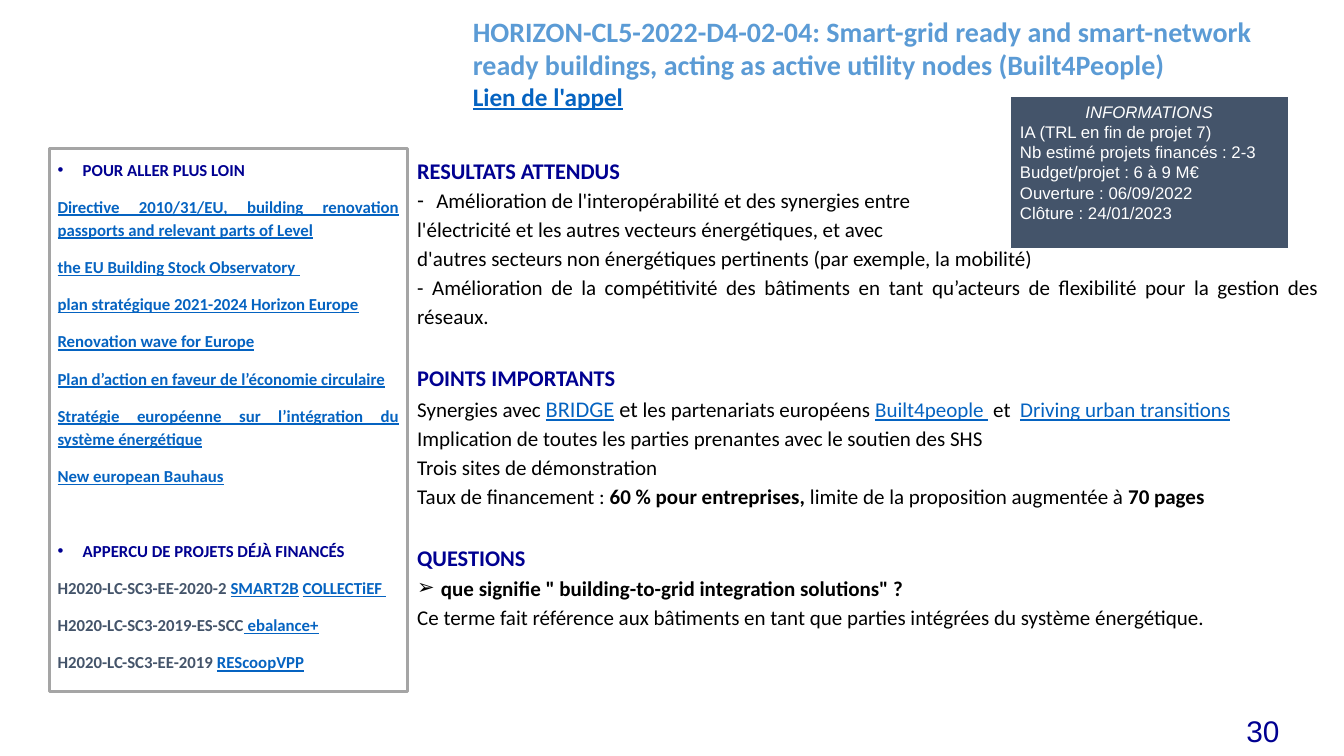
from pptx import Presentation
from pptx.dml.color import RGBColor
from pptx.enum import shapes, text
from pptx.util import Pt
from lxml import etree

NS = "{http://schemas.openxmlformats.org/drawingml/2006/main}"
hues = {"navy": "000091", "blue": "5B9BD5", "link": "0563C1", "slate": "44546A",
        "grey": "A5A5A5", "black": "000000", "white": "FFFFFF"}
left, right, mid, just = (text.PP_ALIGN.LEFT, text.PP_ALIGN.RIGHT,
                          text.PP_ALIGN.CENTER, text.PP_ALIGN.JUSTIFY)

looks = {
    "title": {"name": "Calibri", "size": 20, "bold": True, "hue": "blue"},
    "call": {"name": "Calibri", "size": 18, "bold": True, "underline": True, "hue": "link"},
    "head": {"name": "Calibri", "size": 16, "bold": True, "hue": "navy"},
    "main": {"name": "Calibri", "size": 15, "bold": False, "hue": "black"},
    "large": {"name": "Calibri", "size": 16, "bold": False, "hue": "black"},
    "bold": {"name": "Calibri", "size": 15, "bold": True, "hue": "black"},
    "link": {"name": "Calibri", "size": 15, "underline": True, "hue": "link"},
    "big": {"name": "Calibri", "size": 16, "underline": True, "hue": "link"},
    "side": {"name": "Calibri", "size": 12, "bold": True, "hue": "navy"},
    "ref": {"name": "Calibri", "size": 12, "bold": True, "underline": True, "hue": "link"},
    "code": {"name": "Calibri", "size": 12, "bold": True, "hue": "slate"},
    "info": {"name": "Arial", "size": 12, "hue": "white"},
    "label": {"name": "Arial", "size": 12, "italic": True, "hue": "white"},
    "page": {"name": "Arial", "size": 21.3, "hue": "navy"},
}


def place(shape, x, y, w, h):
    box = {"left": x, "top": y, "width": w, "height": h}
    for key, value in box.items():
        setattr(shape, key, Pt(value))
    frame = shape.text_frame
    form = {"word_wrap": True, "auto_size": text.MSO_AUTO_SIZE.NONE,
            "vertical_anchor": text.MSO_ANCHOR.TOP}
    for key, value in form.items():
        setattr(frame, key, value)
    return frame


def write(frame, rows, align=left, line=1.0, gap=0):
    for i, (runs, extra) in enumerate(rows):
        para = frame.paragraphs[0] if i == 0 else frame.add_paragraph()
        form = {"alignment": extra.get("align", align), "line_spacing": line,
                "space_before": Pt(extra.get("gap", gap) if i else 0), "space_after": Pt(0)}
        for key, value in form.items():
            setattr(para, key, value)
        props = para._p.get_or_add_pPr()
        mark, hang = extra.get("mark"), extra.get("hang", 0)
        props.set("marL", str(Pt(hang)))
        props.set("indent", str(-Pt(hang)))
        if mark:
            etree.SubElement(props, NS + "buFont", typeface="Arial")
            etree.SubElement(props, NS + "buChar", char=mark)
        else:
            etree.SubElement(props, NS + "buNone")
        for words, look in runs:
            run = para.add_run()
            run.text = words
            for key, value in looks[look].items():
                if key == "hue":
                    run.font.color.rgb = RGBColor.from_string(hues[value])
                else:
                    setattr(run.font, key, Pt(value) if key == "size" else value)


deck = Presentation()
deck.slide_width, deck.slide_height = Pt(960), Pt(540)
slide = deck.slides.add_slide(deck.slide_layouts[1])
parts = slide.shapes

title = place(parts.title, 330.5, 6.5, 605.5, 77.8)
write(title, [
    ([("HORIZON-CL5-2022-D4-02-04: Smart-grid ready and smart-network ready buildings, "
       "acting as active utility nodes (Built4People)", "title")], {}),
    ([("Lien de l'appel", "call")], {}),
])

panel = slide.placeholders[1]
panel.line.color.rgb = RGBColor.from_string(hues["grey"])
panel.line.width = Pt(2)
side = place(panel, 35.3, 105.8, 255.6, 388)
for edge in ("left", "top", "right", "bottom"):
    setattr(side, "margin_" + edge, Pt(5.8))
links = ["Directive 2010/31/EU, building renovation passports and relevant parts of Level",
         "the EU Building Stock Observatory ",
         "plan stratégique 2021-2024 Horizon Europe",
         "Renovation wave for Europe",
         "Plan d’action en faveur de l’économie circulaire",
         "Stratégie européenne sur l’intégration du système énergétique",
         "New european Bauhaus"]
dot = {"mark": "•", "hang": 18, "align": left}
flat = {"align": left}
write(side, [
    ([("POUR ALLER PLUS LOIN", "side")], dot),
    *[([(link, "ref")], {}) for link in links],
    ([("APPERCU DE PROJETS DÉJÀ FINANCÉS", "side")], {**dot, "gap": 36.8}),
    ([("H2020-LC-SC3-EE-2020-2 ", "code"), ("SMART2B", "ref"), (" ", "code"),
      ("COLLECTiEF ", "ref")], flat),
    ([("H2020-LC-SC3-2019-ES-SCC", "code"), (" ebalance+", "ref")], flat),
    ([("H2020-LC-SC3-EE-2019 ", "code"), ("REScoopVPP", "ref")], flat),
], just, 1.15, 10)

card = parts.add_shape(shapes.MSO_SHAPE.RECTANGLE, 0, 0, 0, 0)
card.shadow.inherit = False
card.fill.solid()
card.fill.fore_color.rgb = RGBColor.from_string(hues["slate"])
card.line.color.rgb = RGBColor.from_string(hues["white"])
card.line.width = Pt(0.75)
facts = ["IA (TRL en fin de projet 7)", "Nb estimé projets financés : 2-3",
         "Budget/projet : 6 à 9 M€", "Ouverture : 06/09/2022", "Clôture : 24/01/2023"]
write(place(card, 721.5, 69.1, 198.7, 108.7),
      [([("INFORMATIONS", "label")], {"align": mid})]
      + [([(fact, "info")], {}) for fact in facts])

main = place(parts.add_textbox(0, 0, 0, 0), 290.9, 105.8, 658, 350)
write(main, [
    ([("RESULTATS ATTENDUS", "head")], {}),
    ([("Amélioration de l'interopérabilité et des synergies entre", "main")],
     {"mark": "-", "hang": 13.7}),
    ([("l'électricité et les autres vecteurs énergétiques, et avec", "main")], {}),
    ([("d'autres secteurs non énergétiques pertinents (par exemple, la mobilité)", "main")], {}),
    ([("- Amélioration de la compétitivité des bâtiments en tant qu’acteurs de flexibilité "
       "pour la gestion des réseaux.", "main")], {}),
    ([("POINTS IMPORTANTS", "head")], {"gap": 22.5}),
    ([("Synergies avec ", "main"), ("BRIDGE", "big"), (" et", "large"),
      (" les partenariats européens ", "main"), ("Built4people ", "link"),
      (" et  ", "main"), ("Driving urban transitions", "link")], {}),
    ([("Implication de toutes les parties prenantes avec le soutien des SHS", "main")], {}),
    ([("Trois sites de démonstration", "main")], {}),
    ([("Taux de financement : ", "main"), ("60 % pour entreprises, ", "bold"),
      ("limite de la proposition augmentée à ", "main"), ("70 pages", "bold")], {}),
    ([("QUESTIONS", "head")], {"gap": 22.5}),
    ([("que signifie \" building-to-grid integration solutions\" ?", "bold")],
     {"mark": "➢", "hang": 17, "align": left}),
    ([("Ce terme fait référence aux bâtiments en tant que parties intégrées du système "
       "énergétique.", "main")], {}),
], just, 1.15)

page = place(parts.add_textbox(0, 0, 0, 0), 797.8, 504, 123.1, 36)
page.vertical_anchor = text.MSO_ANCHOR.MIDDLE
write(page, [([("30", "page")], {})], right)

deck.save("out.pptx")
